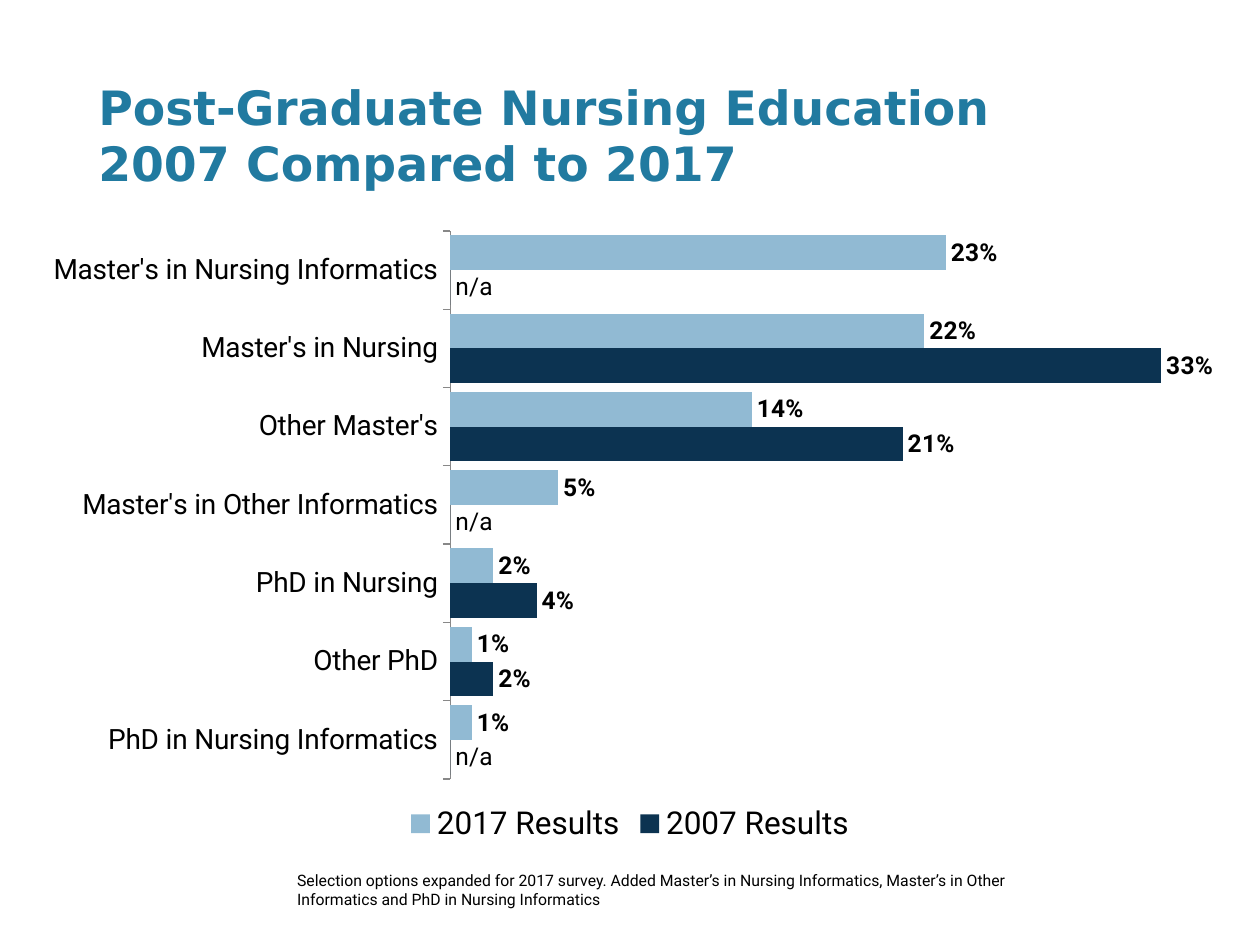
from pptx import Presentation
from pptx.chart.data import CategoryChartData
from pptx.dml.color import RGBColor
from pptx.enum.chart import (XL_CHART_TYPE, XL_LABEL_POSITION,
                             XL_LEGEND_POSITION, XL_TICK_MARK)
from pptx.enum.text import MSO_ANCHOR, PP_ALIGN
from pptx.oxml import parse_xml
from pptx.oxml.ns import nsdecls
from pptx.util import Inches, Pt

BAR = XL_CHART_TYPE.BAR_CLUSTERED
OUTSIDE_END = XL_LABEL_POSITION.OUTSIDE_END
BOTTOM = XL_LEGEND_POSITION.BOTTOM
TICK_OUT = XL_TICK_MARK.OUTSIDE
MIDDLE, LEFT = MSO_ANCHOR.MIDDLE, PP_ALIGN.LEFT

WIDTH, HEIGHT = Inches(10), Inches(7.5)
COLORS = {"title": "217AA0", "text": "000000", "axis": "888888",
          "2007": "0C3351", "2017": "91BAD3"}
HEAD_FONT, BODY_FONT = "DejaVu Sans", "Roboto"

# Education level, share in 2007 (None = not asked), share in 2017
RESULTS = [
    ("PhD in Nursing Informatics", None, 0.01),
    ("Other PhD", 0.02, 0.01),
    ("PhD in Nursing", 0.04, 0.02),
    ("Master's in Other Informatics", None, 0.05),
    ("Other Master's", 0.21, 0.14),
    ("Master's in Nursing", 0.33, 0.22),
    ("Master's in Nursing Informatics", None, 0.23),
]


def box(left, top, width, height):
    """Turn shares of the slide into a position and size."""
    return (int(left * WIDTH), int(top * HEIGHT),
            int(width * WIDTH), int(height * HEIGHT))


def style(font, size, color="text", bold=False, name=BODY_FONT):
    font.name, font.size, font.bold = name, Pt(size), bold
    font.color.rgb = RGBColor.from_string(COLORS[color])


def add_title(s, area, text):
    sp = s.shapes.title
    sp.left, sp.top, sp.width, sp.height = area
    tf = sp.text_frame
    tf.text = text
    tf.word_wrap, tf.vertical_anchor, tf.margin_left = True, MIDDLE, 0
    p = tf.paragraphs[0]
    p.alignment = LEFT
    for r in p.runs:
        style(r.font, 27, "title", True, HEAD_FONT)


def set_plot_layout(chart, x, y, w, h):
    """Fix the inner plot area, in shares of the chart."""
    plot_area = chart.plots[0]._element.getparent()
    for old in plot_area.findall("{*}layout"):
        plot_area.remove(old)
    modes = '<c:xMode val="edge"/><c:yMode val="edge"/>'
    sizes = "".join(f'<c:{k} val="{v}"/>'
                    for k, v in zip("xywh", (x, y, w, h)))
    plot_area.insert(0, parse_xml(
        f'<c:layout {nsdecls("c")}><c:manualLayout>'
        f'<c:layoutTarget val="inner"/>{modes}{sizes}'
        f'</c:manualLayout></c:layout>'))


def format_series(series, color):
    series.format.fill.solid()
    series.format.fill.fore_color.rgb = RGBColor.from_string(COLORS[color])
    series.invert_if_negative = False
    labels = series.data_labels
    labels.show_value, labels.position = True, OUTSIDE_END
    labels.number_format, labels.number_format_is_linked = "0%", False
    style(labels.font, 14, bold=True)


def add_results_chart(s, area):
    data = CategoryChartData(number_format="0%")
    data.categories = [level for level, _, _ in RESULTS]
    data.add_series("2007 Results", [old or 0 for _, old, _ in RESULTS])
    data.add_series("2017 Results", [new for _, _, new in RESULTS])
    chart = s.shapes.add_chart(BAR, *area, data).chart
    chart.has_title = False
    style(chart.font, 18)
    set_plot_layout(chart, 0.35, 0.02, 0.63, 0.87)

    # Axes
    values, levels = chart.value_axis, chart.category_axis
    values.visible = values.has_major_gridlines = False
    values.minimum_scale, values.maximum_scale = 0, 0.35
    levels.major_tick_mark = TICK_OUT
    style(levels.tick_labels.font, 16)
    levels.format.line.width = Pt(0.75)
    levels.format.line.color.rgb = RGBColor.from_string(COLORS["axis"])

    # Bars and labels
    plot = chart.plots[0]
    plot.gap_width, plot.overlap, plot.vary_by_categories = 25, 0, False
    for series, color in zip(plot.series, ("2007", "2017")):
        format_series(series, color)
    for i, (_, old, _) in enumerate(RESULTS):
        if old is None:
            label = plot.series[0].points[i].data_label
            label.text_frame.text = "n/a"
            style(label.text_frame.paragraphs[0].runs[0].font, 14)
            label.position = OUTSIDE_END

    # Legend
    chart.has_legend = True
    chart.legend.position = BOTTOM
    chart.legend.include_in_layout = False
    style(chart.legend.font, 18)


def add_footnote(s, area, text):
    tf = s.shapes.add_textbox(*area).text_frame
    tf.word_wrap = True
    tf.text = text
    style(tf.paragraphs[0].runs[0].font, 9)


def main():
    prs = Presentation()
    prs.slide_width, prs.slide_height = WIDTH, HEIGHT
    s = prs.slides.add_slide(prs.slide_layouts[5])
    add_title(s, box(0.078, 0.084, 0.907, 0.117),
              "Post-Graduate Nursing Education\v2007 Compared to 2017")
    add_results_chart(s, box(0.025, 0.231, 0.95, 0.667))
    add_footnote(s, box(0.226, 0.915, 0.592, 0.053),
                 "Selection options expanded for 2017 survey. Added Master’s in "
                 "Nursing Informatics, Master’s in Other Informatics and PhD in "
                 "Nursing Informatics")
    prs.save("out.pptx")


if __name__ == "__main__":
    main()
